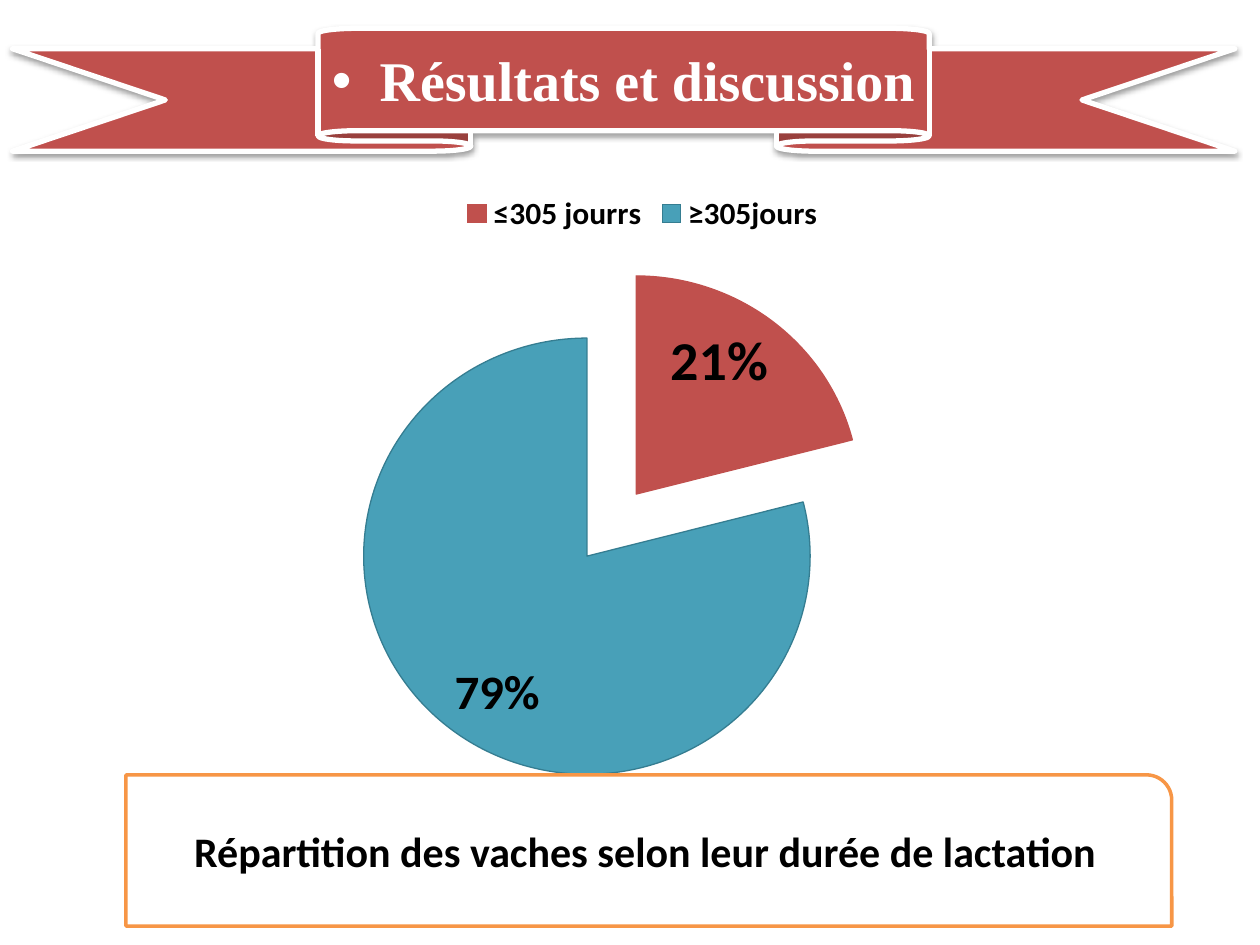
from dataclasses import dataclass

from lxml import etree
from pptx import Presentation
from pptx import util as u
from pptx.chart import data as chart_data
from pptx.dml import color
from pptx.enum import chart as c
from pptx.enum import shapes, text
from pptx.oxml import parse_xml
from pptx.oxml import ns

WIDTH, HEIGHT = 10, 7.5
BLACK, WHITE, RED, TEAL = "000000", "FFFFFF", "C0504D", "48A0B8"


@dataclass
class Box:
    left: float
    top: float
    width: float
    height: float

    def lengths(self) -> list:
        return [u.Inches(share * side) for share, side in (
            (self.left, WIDTH), (self.top, HEIGHT), (self.width, WIDTH), (self.height, HEIGHT))]


@dataclass
class Slice:
    category: str
    value: int
    fill: str
    line: str
    label_size: int
    explosion: int


SLICES = [
    Slice("≤305 jourrs", 21, RED, RED, 32, 25),
    Slice("≥305jours", 79, TEAL, "357D91", 28, 11),
]
PLOT = {"x": 0.27, "y": 0.24, "w": 0.39, "h": 0.75}


def rgb(value: str) -> color.RGBColor:
    return color.RGBColor.from_string(value)


def style_font(font, name: str, size: float, value: str) -> None:
    font.name, font.size, font.bold = name, u.Pt(size), True
    font.color.rgb = rgb(value)


def style_outline(item, fill: str, line: str, width: float) -> None:
    item.fill.solid()
    item.fill.fore_color.rgb = rgb(fill)
    item.line.color.rgb = rgb(line)
    item.line.width = u.Pt(width)


def write(shape, words: str, name: str, size: float, value: str):
    frame = shape.text_frame
    frame.word_wrap = True
    frame.vertical_anchor = text.MSO_ANCHOR.MIDDLE
    paragraph = frame.paragraphs[0]
    paragraph.alignment = text.PP_ALIGN.CENTER
    run = paragraph.add_run()
    run.text = words
    style_font(run.font, name, size, value)
    return paragraph


def add_caption(slide, box: Box) -> None:
    shape = slide.shapes.add_shape(shapes.MSO_SHAPE.ROUND_1_RECTANGLE, *box.lengths())
    shape.shadow.inherit = False
    style_outline(shape, WHITE, "F79646", 2)
    write(shape, "Répartition des vaches selon leur durée de lactation", "Calibri", 24, BLACK)


def add_ribbon(slide, box: Box) -> None:
    ribbon = slide.placeholders[1]
    ribbon.left, ribbon.top, ribbon.width, ribbon.height = box.lengths()
    properties = ribbon.element.spPr
    geometry = etree.SubElement(properties, ns.qn("a:prstGeom"), prst="ribbon2")
    etree.SubElement(geometry, ns.qn("a:avLst"))
    style_outline(ribbon, RED, WHITE, 3)
    properties.append(parse_xml(
        f'<a:effectLst {ns.nsdecls("a")}><a:outerShdw blurRad="{u.Pt(3.1)}" dist="{u.Pt(1.6)}" '
        f'dir="5400000" rotWithShape="0"><a:srgbClr val="{BLACK}"><a:alpha val="38000"/>'
        '</a:srgbClr></a:outerShdw></a:effectLst>'))
    paragraph = write(ribbon, "Résultats et discussion ", "Times New Roman", 32, WHITE)
    settings = paragraph._p.get_or_add_pPr()
    settings.set("marL", str(u.Inches(0.38)))
    settings.set("indent", str(u.Inches(-0.38)))
    etree.SubElement(settings, ns.qn("a:buFont"), typeface="Arial")
    etree.SubElement(settings, ns.qn("a:buChar"), char="•")


def place_plot(chart) -> None:
    area = chart._chartSpace.chart.plotArea
    for layout in area.findall(ns.qn("c:layout")):
        area.remove(layout)
    layout = etree.Element(ns.qn("c:layout"))
    manual = etree.SubElement(layout, ns.qn("c:manualLayout"))
    modes = {"layoutTarget": "inner", "xMode": "edge", "yMode": "edge"}
    for name, value in (modes | PLOT).items():
        etree.SubElement(manual, ns.qn(f"c:{name}"), val=str(value))
    area.insert(0, layout)


def add_pie(slide, box: Box) -> None:
    data = chart_data.CategoryChartData()
    data.categories = [part.category for part in SLICES]
    data.add_series("Series 1", [part.value for part in SLICES])
    chart = slide.shapes.add_chart(c.XL_CHART_TYPE.PIE, *box.lengths(), data).chart
    style_font(chart.font, "Calibri", 18, BLACK)
    chart.has_title = False
    chart.has_legend = True
    chart.legend.position = c.XL_LEGEND_POSITION.TOP
    chart.legend.include_in_layout = False
    style_font(chart.legend.font, "Calibri", 18, BLACK)
    plot = chart.plots[0]
    plot.vary_by_categories = True
    series = plot.series[0]
    for index, part in enumerate(SLICES):
        point = series.points[index]
        style_outline(point.format, part.fill, part.line, 0.75)
        explosion = etree.Element(ns.qn("c:explosion"), val=str(part.explosion))
        point.format._element.find(ns.qn("c:spPr")).addprevious(explosion)
        label = point.data_label
        style_font(label.font, "Calibri", part.label_size, BLACK)
        label.position = c.XL_LABEL_POSITION.INSIDE_END
        element = series.data_labels._element.findall(ns.qn("c:dLbl"))[index]
        element.find(ns.qn("c:showVal")).set("val", "0")
        element.find(ns.qn("c:showPercent")).set("val", "1")
    labels = series.data_labels
    labels.show_value, labels.show_percentage = False, True
    labels.number_format, labels.number_format_is_linked = "0%", False
    place_plot(chart)


def main() -> None:
    presentation = Presentation()
    presentation.slide_width, presentation.slide_height = u.Inches(WIDTH), u.Inches(HEIGHT)
    slide = presentation.slides.add_slide(presentation.slide_layouts[1])
    title = slide.shapes.title.element
    title.getparent().remove(title)
    add_ribbon(slide, Box(0.01, 0.03, 0.97, 0.13))
    add_pie(slide, Box(0.05, 0.19, 0.92, 0.63))
    add_caption(slide, Box(0.1, 0.82, 0.83, 0.16))
    presentation.save("out.pptx")


if __name__ == "__main__":
    main()
